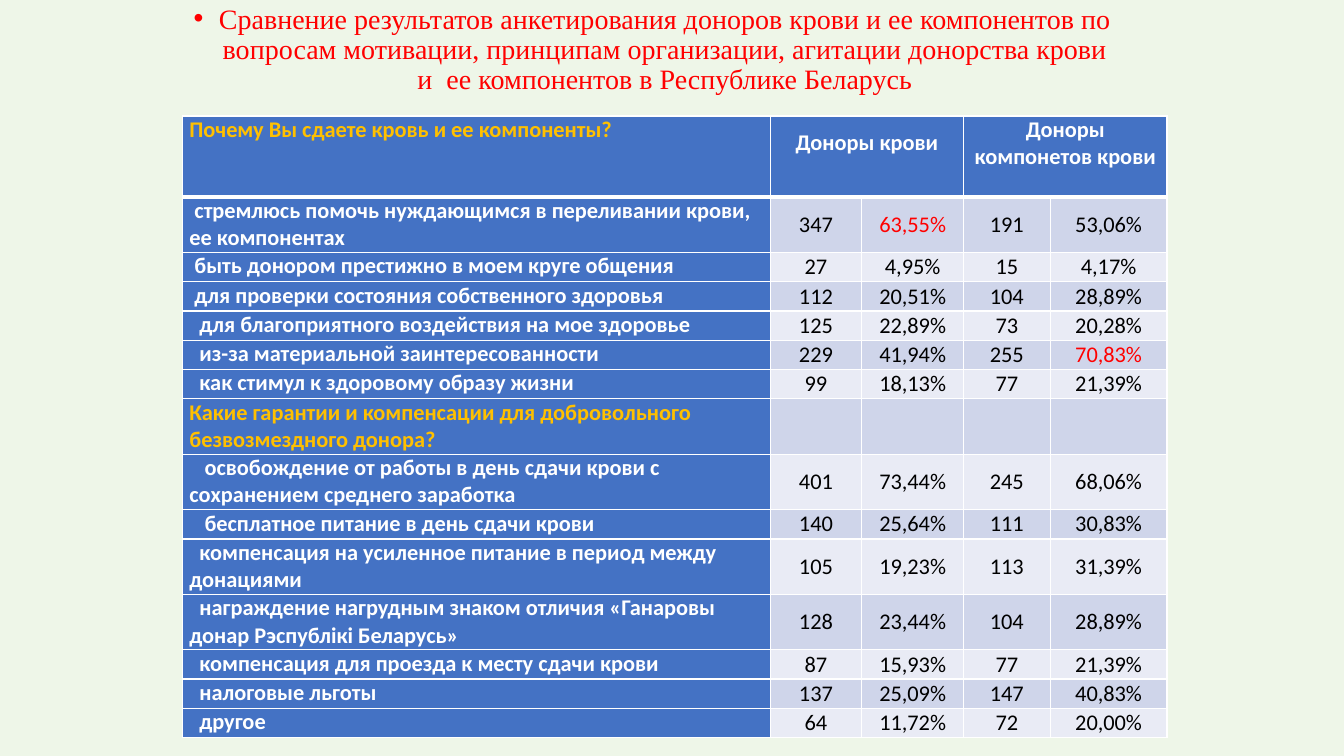
from lxml import etree
from pptx import Presentation
from pptx import util as u
from pptx.dml.color import RGBColor
from pptx.enum import text
from pptx.oxml.ns import qn

WHITE, BLACK, RED, GOLD = "FFFFFF", "000000", "FF0000", "FFC000"
BLUE, BANDS = "4472C4", ("CFD5EA", "E9EBF5")
SPACE = 3.6  # width of one indent step

TITLE = ("Сравнение результатов анкетирования доноров крови и ее компонентов "
         "по вопросам мотивации, принципам организации, агитации донорства "
         "крови и  ее компонентов в Республике Беларусь")
QUESTION = "Почему Вы сдаете кровь и ее компоненты?"
GROUPS = ["Доноры крови", "Доноры компонетов крови"]
COLUMNS = [419.8, 65.5, 72.7, 61.9, 83.5]
HEADER_HEIGHT, LINE_HEIGHT, TWO_LINE_HEIGHT = 58, 20.9, 39.6

# indent steps, lines, label, values
ANSWERS = [
    (1, 2, "стремлюсь помочь нуждающимся в переливании крови, ее компонентах",
     ["347", "63,55%", "191", "53,06%"]),
    (1, 1, "быть донором престижно в моем круге общения",
     ["27", "4,95%", "15", "4,17%"]),
    (1, 1, "для проверки состояния собственного здоровья",
     ["112", "20,51%", "104", "28,89%"]),
    (2, 1, "для благоприятного воздействия на мое здоровье",
     ["125", "22,89%", "73", "20,28%"]),
    (2, 1, "из-за материальной заинтересованности",
     ["229", "41,94%", "255", "70,83%"]),
    (2, 1, "как стимул к здоровому образу жизни",
     ["99", "18,13%", "77", "21,39%"]),
    (0, 2, "Какие гарантии и компенсации для добровольного безвозмездного донора?",
     [""] * 4),
    (3, 2, "освобождение от работы в день сдачи крови с сохранением среднего заработка",
     ["401", "73,44%", "245", "68,06%"]),
    (3, 1, "бесплатное питание в день сдачи крови",
     ["140", "25,64%", "111", "30,83%"]),
    (2, 2, "компенсация на усиленное питание в период между донациями",
     ["105", "19,23%", "113", "31,39%"]),
    (2, 2, "награждение нагрудным знаком отличия «Ганаровы донар Рэспублiкi Беларусь»",
     ["128", "23,44%", "104", "28,89%"]),
    (2, 1, "компенсация для проезда к месту сдачи крови",
     ["87", "15,93%", "77", "21,39%"]),
    (2, 1, "налоговые льготы", ["137", "25,09%", "147", "40,83%"]),
    (2, 1, "другое", ["64", "11,72%", "72", "20,00%"]),
]
HIGHLIGHTS = {"63,55%", "70,83%"}


def color(value):
    return RGBColor.from_string(value)


def indent(para, first, left=0):
    props = para._p.get_or_add_pPr()
    props.set("marL", str(u.Pt(left)))
    props.set("indent", str(u.Pt(first)))
    return props


class SlideBuilder:
    title_font, table_font = "Times New Roman", "Calibri"
    title_size, table_size = 20, 16

    def __init__(self, slide):
        self.slide = slide

    def background(self, fill):
        self.slide.background.fill.solid()
        self.slide.background.fill.fore_color.rgb = color(fill)

    def set_text(self, para, words, font, size, ink, bold=False):
        para.text = words
        para.font.name = font
        para.font.size = u.Pt(size)
        para.font.bold = bold
        para.font.color.rgb = color(ink)

    def title(self, words, left, top, width, height):
        box = self.slide.shapes.add_textbox(*map(u.Pt, (left, top, width, height)))
        box.text_frame.word_wrap = True
        para = box.text_frame.paragraphs[0]
        self.set_text(para, words, self.title_font, self.title_size, RED)
        para.alignment = text.PP_ALIGN.CENTER
        para.line_spacing = 0.9
        para.space_before = u.Pt(10)
        props = indent(para, -18, 18)
        bullet_font = props.find(qn("a:defRPr"))
        for tag, key, value in (("a:buFont", "typeface", "Arial"),
                                ("a:buChar", "char", "•")):
            bullet_font.addprevious(etree.Element(qn(tag), {key: value}))

    def table(self, left, top, columns, rows):
        frame = self.slide.shapes.add_table(
            len(rows), len(columns),
            *map(u.Pt, (left, top, sum(columns), sum(rows))))
        table = frame.table
        table.first_col = True
        for column, width in zip(table.columns, columns):
            column.width = u.Pt(width)
        for row, height in zip(table.rows, rows):
            row.height = u.Pt(height)
        return table

    def borders(self, cell, top, bottom):
        props = cell._tc.get_or_add_tcPr()
        for side, width in zip("LRTB", (1, 1, top, bottom)):
            line = etree.SubElement(props, qn(f"a:ln{side}"), w=str(u.Pt(width)))
            fill = etree.SubElement(line, qn("a:solidFill"))
            etree.SubElement(fill, qn("a:srgbClr"), val=WHITE)

    def cell(self, cell, words, fill, ink, bold=False, centered=True,
             top=1, bottom=1, first=0):
        self.borders(cell, top, bottom)
        cell.fill.solid()
        cell.fill.fore_color.rgb = color(fill)
        cell.margin_left = cell.margin_right = u.Pt(5)
        cell.margin_top = cell.margin_bottom = 0
        para = cell.text_frame.paragraphs[0]
        self.set_text(para, words, self.table_font, self.table_size, ink, bold)
        if centered:
            para.alignment = text.PP_ALIGN.CENTER
            cell.vertical_anchor = text.MSO_ANCHOR.MIDDLE
        if first:
            indent(para, first)


def main():
    deck = Presentation()
    deck.slide_width, deck.slide_height = u.Pt(960), u.Pt(540)
    page = SlideBuilder(deck.slides.add_slide(deck.slide_layouts[6]))
    page.background("EEF6E8")
    page.title(TITLE, 128.2, 0, 675.4, 476)

    heights = [TWO_LINE_HEIGHT if lines == 2 else LINE_HEIGHT
               for _, lines, _, _ in ANSWERS]
    table = page.table(130.3, 82.8, COLUMNS, [HEADER_HEIGHT] + heights)

    header = [QUESTION, GROUPS[0], "", GROUPS[1], ""]
    for col, words in enumerate(header):
        page.cell(table.cell(0, col), words, BLUE, WHITE if col else GOLD,
                  bold=True, centered=col > 0, bottom=3)
    for col in (1, 3):
        table.cell(0, col).merge(table.cell(0, col + 1))
        table.cell(0, col).margin_bottom = u.Pt(19.5)

    for row, (steps, _, label, values) in enumerate(ANSWERS, 1):
        top = 3 if row == 1 else 1
        page.cell(table.cell(row, 0), label, BLUE, WHITE if steps else GOLD,
                  bold=True, centered=False, top=top, first=steps * SPACE)
        for col, value in enumerate(values, 1):
            page.cell(table.cell(row, col), value, BANDS[(row - 1) % 2],
                      RED if value in HIGHLIGHTS else BLACK, top=top)

    deck.save("out.pptx")


if __name__ == "__main__":
    main()
